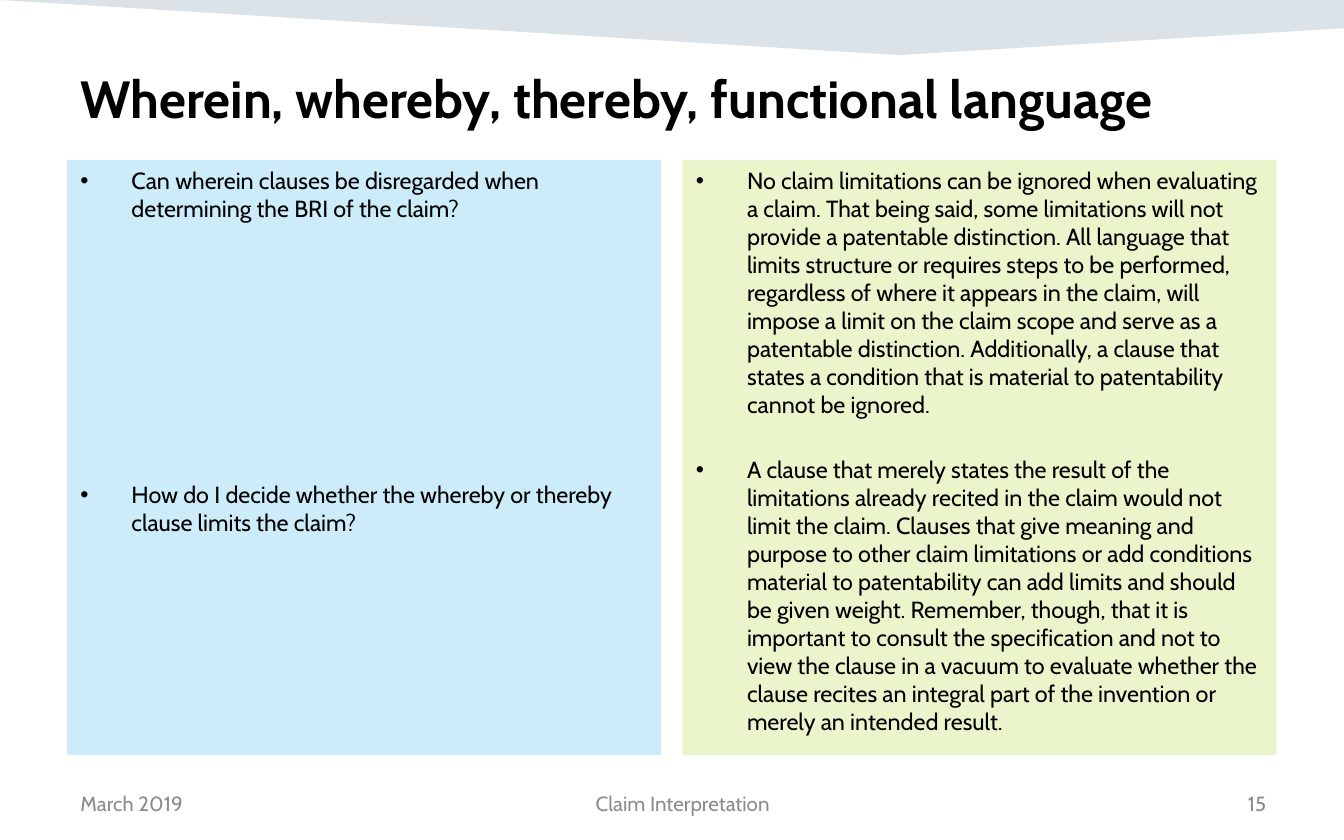
from lxml.etree import SubElement
from pptx import Presentation
from pptx.dml.color import RGBColor
from pptx.enum.shapes import MSO_SHAPE
from pptx.enum.text import MSO_ANCHOR as Anchor, PP_ALIGN as Align
from pptx.oxml.ns import qn
from pptx.util import Inches, Pt

FONT = "Cabin"
BULLET_FONT = "Arial"
COLORS = {"band": "164469", "question": "CCECFA", "answer": "EBF5CB",
          "text": "000000", "footer": "8C8C8C"}
WIDTH, HEIGHT = 10, 6.25
MARGIN, GUTTER = 0.5, 0.16
PANEL_TOP, PANEL_HEIGHT = 1.19, 4.43
FOOTER_TOP, FOOTER_HEIGHT = 5.79, 0.33
INDENT = 0.38
BAND_OPACITY = 15
BAND_POINTS = [(0, 0), (WIDTH, 0), (WIDTH, 0.21), (6.69, 0.41)]

TITLE = "Wherein, whereby, thereby, functional language"
PANELS = [
    ("question", 138.2, [
        "Can wherein clauses be disregarded when determining the BRI of the claim?",
        "How do I decide whether the whereby or thereby clause limits the claim?",
    ]),
    ("answer", 19.8, [
        "No claim limitations can be ignored when evaluating a claim. That being said, "
        "some limitations will not provide a patentable distinction. All language that "
        "limits structure or requires steps to be performed, regardless of where it "
        "appears in the claim, will impose a limit on the claim scope and serve as a "
        "patentable distinction. Additionally, a clause that states a condition that is "
        "material to patentability cannot be ignored.",
        "A clause that merely states the result of the limitations already recited in the "
        "claim would not limit the claim. Clauses that give meaning and purpose to other "
        "claim limitations or add conditions material to patentability can add limits and "
        "should be given weight. Remember, though, that it is important to consult the "
        "specification and not to view the clause in a vacuum to evaluate whether the "
        "clause recites an integral part of the invention or merely an intended result.",
    ]),
]
FOOTERS = [
    ("March 2019", MARGIN, 1.51, Align.LEFT),
    ("Claim Interpretation", 2.07, 6.02, Align.CENTER),
    ("15", 8.17, 1.35, Align.RIGHT),
]


def color(name):
    return RGBColor.from_string(COLORS[name])


def paint(shape, name):
    shape.fill.solid()
    shape.fill.fore_color.rgb = color(name)
    shape.line.fill.background()
    shape.shadow.inherit = False


def write(paragraph, text, size, name="text", bold=False, align=Align.LEFT):
    paragraph.text = text
    paragraph.alignment = align
    font = paragraph.font
    font.name, font.size, font.bold = FONT, Pt(size), bold
    font.color.rgb = color(name)


def add_bullet(paragraph):
    properties = paragraph._p.get_or_add_pPr()
    properties.set("marL", str(Inches(INDENT)))
    properties.set("indent", str(-Inches(INDENT)))
    for tag, attributes in (("a:buFont", {"typeface": BULLET_FONT}),
                            ("a:buChar", {"char": "•"})):
        bullet = properties.makeelement(qn(tag), attributes)
        properties.insert_element_before(bullet, "a:tabLst", "a:defRPr", "a:extLst")


def add_band(slide):
    points = [(Inches(x), Inches(y)) for x, y in BAND_POINTS]
    builder = slide.shapes.build_freeform(*points[0])
    builder.add_line_segments(points[1:], close=True)
    band = builder.convert_to_shape()
    paint(band, "band")
    tint = band._element.spPr.find(qn("a:solidFill"))[0]
    SubElement(tint, qn("a:alpha"), val=str(BAND_OPACITY * 1000))


def add_label(slide, text, box, size, **style):
    label = slide.shapes.add_textbox(*map(Inches, box))
    frame = label.text_frame
    frame.word_wrap = True
    frame.vertical_anchor = Anchor.BOTTOM
    write(frame.paragraphs[0], text, size, **style)


def add_panel(slide, column, name, gap, items):
    width = (WIDTH - 2 * MARGIN - GUTTER) / len(PANELS)
    left = MARGIN + column * (width + GUTTER)
    panel = slide.shapes.add_shape(
        MSO_SHAPE.RECTANGLE, *map(Inches, (left, PANEL_TOP, width, PANEL_HEIGHT)))
    paint(panel, name)
    frame = panel.text_frame
    frame.word_wrap = True
    frame.vertical_anchor = Anchor.TOP
    for index, item in enumerate(items):
        paragraph = frame.add_paragraph() if index else frame.paragraphs[0]
        write(paragraph, item, 12.5)
        paragraph.space_before = Pt(gap if index else 0)
        add_bullet(paragraph)


def main():
    presentation = Presentation()
    presentation.slide_width = Inches(WIDTH)
    presentation.slide_height = Inches(HEIGHT)
    slide = presentation.slides.add_slide(presentation.slide_layouts[6])
    add_band(slide)
    add_label(slide, TITLE, (MARGIN, 0.41, WIDTH - 2 * MARGIN, 0.6), 28, bold=True)
    for column, panel in enumerate(PANELS):
        add_panel(slide, column, *panel)
    for text, left, width, align in FOOTERS:
        add_label(slide, text, (left, FOOTER_TOP, width, FOOTER_HEIGHT), 11,
                  name="footer", align=align)
    presentation.save("out.pptx")


if __name__ == "__main__":
    main()
